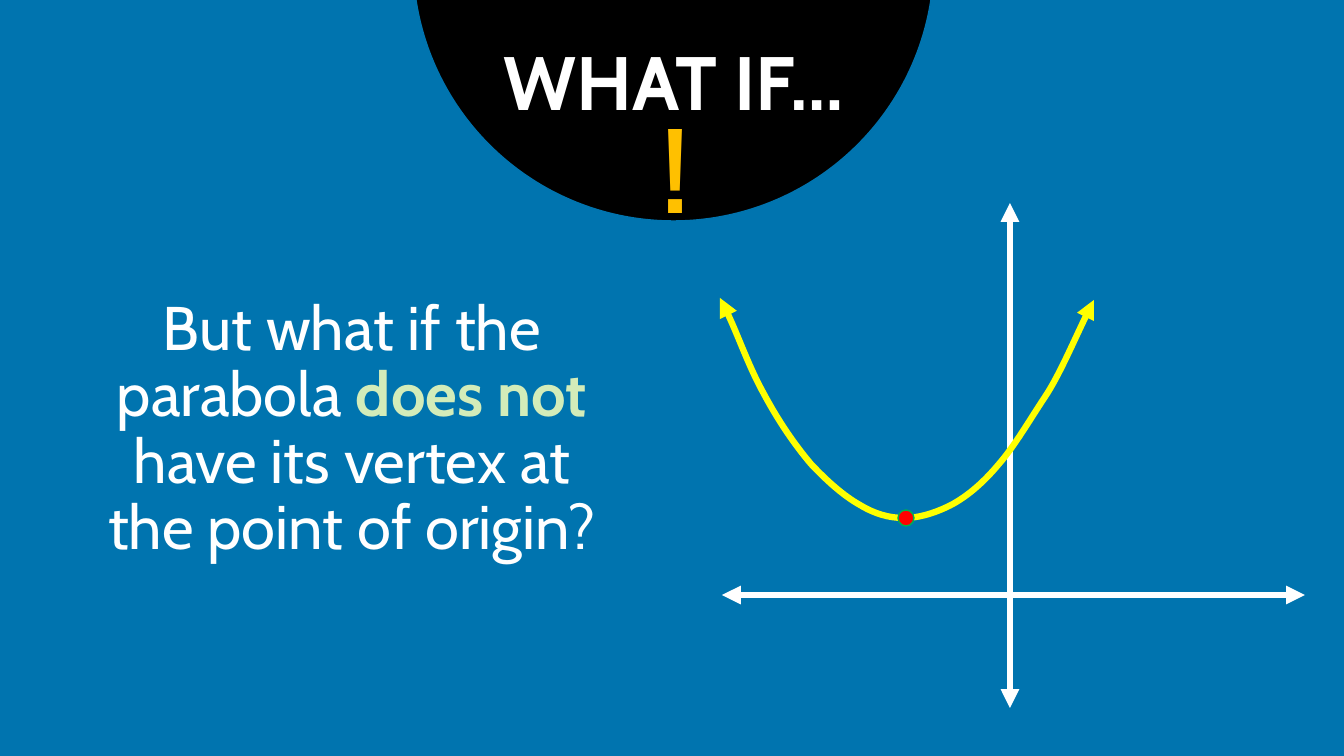
from lxml import etree
from pptx import Presentation
from pptx import util as u
from pptx.dml.color import RGBColor
from pptx.enum import shapes, text
from pptx.oxml import ns

SCALE = 914400 / 100.8
FONT = "Cabin"
BLUE, BLACK, WHITE = "0074AF", "000000", "FFFFFF"
MINT, GOLD, YELLOW = "D3ECB9", "FFC000", "FFFF00"
RED, GREEN = "FF0000", "00B050"
PARABOLA = [
    (720, 298),
    (735, 326), (749, 367), (764, 394),
    (779, 422), (795, 445), (811, 464),
    (828, 482), (844, 496), (860, 505),
    (875, 514), (889, 518), (904, 518),
    (919, 518), (936, 513), (953, 504),
    (969, 495), (984, 482), (999, 464),
    (1014, 447), (1031, 418), (1045, 397),
    (1059, 376), (1080, 327), (1094, 300),
]


def px(n):
    """Turn pixels into EMU."""
    return u.Emu(round(n * SCALE))


def rgb(value):
    """Turn a hex string into a colour."""
    return RGBColor.from_string(value)


def style_line(shape, color, width):
    """Set the colour and width of a line."""
    shape.line.color.rgb = rgb(color)
    shape.line.width = u.Pt(width)


def add_arrowheads(shape):
    """Put a triangle at both ends of a line."""
    ln = shape._element.spPr.find(ns.qn("a:ln"))
    for tag in ("a:headEnd", "a:tailEnd"):
        etree.SubElement(ln, ns.qn(tag), type="triangle")


def add_circle(s, x, y, size, fill, line):
    """Add a filled circle with a thin outline."""
    sp = s.shapes.add_shape(shapes.MSO_SHAPE.OVAL, px(x), px(y), px(size), px(size))
    sp.shadow.inherit = False
    sp.fill.solid()
    sp.fill.fore_color.rgb = rgb(fill)
    style_line(sp, line, 1)


def add_axis(s, x1, y1, x2, y2):
    """Add a white axis with two arrowheads."""
    axis = s.shapes.add_connector(
        shapes.MSO_CONNECTOR.STRAIGHT, px(x1), px(y1), px(x2), px(y2))
    style_line(axis, WHITE, 4.5)
    add_arrowheads(axis)
    etree.SubElement(axis._element.spPr, ns.qn("a:effectLst"))


def add_curve(s, points, color):
    """Add an open Bezier curve with two arrowheads."""
    builder = s.shapes.build_freeform(*points[0], scale=SCALE)
    builder.add_line_segments(points[1:], close=False)
    sp = builder.convert_to_shape()
    sp.shadow.inherit = False
    sp.fill.background()
    style_line(sp, color, 4.5)
    add_arrowheads(sp)
    segments = sp._element.findall(".//" + ns.qn("a:lnTo"))
    for i in range(0, len(segments), 3):
        bezier = etree.Element(ns.qn("a:cubicBezTo"))
        segments[i].addprevious(bezier)
        for segment in segments[i:i + 3]:
            bezier.append(segment[0])
            segment.getparent().remove(segment)


def fill_text(sp, runs, size, anchor=text.MSO_ANCHOR.TOP, wrap=True, margin=10):
    """Write one centred paragraph of (text, colour, bold) runs."""
    tf = sp.text_frame
    tf.word_wrap = wrap
    tf.auto_size = text.MSO_AUTO_SIZE.SHAPE_TO_FIT_TEXT
    tf.vertical_anchor = anchor
    tf.margin_left = tf.margin_right = px(margin)
    tf.margin_top = tf.margin_bottom = px(5)
    p = tf.paragraphs[0]
    p.alignment = text.PP_ALIGN.CENTER
    p.line_spacing = 0.9
    p.space_before = u.Pt(0)
    p.font.name = FONT
    p.font.size = u.Pt(size)
    for words, color, bold in runs:
        r = p.add_run()
        r.text = words
        r.font.color.rgb = rgb(color)
        r.font.bold = bold


def add_title(s, x, y, w, h, words):
    """Move the title placeholder to the front and fill it."""
    title = s.shapes.title
    title.left, title.top, title.width, title.height = map(px, (x, y, w, h))
    s.shapes._spTree.append(title._element)
    fill_text(title, [(words, WHITE, True)], 54)


def add_text(s, x, y, w, h, runs, size, **options):
    """Add a text box."""
    sp = s.shapes.add_textbox(px(x), px(y), px(w), px(h))
    fill_text(sp, runs, size, **options)


def main():
    """Build the slide."""
    prs = Presentation()
    prs.slide_width, prs.slide_height = px(1344), px(756)
    s = prs.slides.add_slide(prs.slide_layouts[5])
    s.background.fill.solid()
    s.background.fill.fore_color.rgb = rgb(BLUE)

    add_circle(s, 413, -300, 521, BLACK, BLUE)
    add_title(s, 432, 40, 483, 93, "WHAT IF…")
    question = [
        ("But what if the parabola ", WHITE, False),
        ("does not ", MINT, True),
        ("have its vertex at the point of origin?", WHITE, False),
    ]
    add_text(s, 44, 292, 616, 279, question, 44, margin=50)
    add_text(s, 632, 111, 88, 132, [("!", GOLD, True)], 80,
             anchor=text.MSO_ANCHOR.MIDDLE, wrap=False)

    add_axis(s, 722, 595, 1305, 595)
    add_axis(s, 1010, 203, 1010, 708)
    add_curve(s, PARABOLA, YELLOW)
    add_circle(s, 898, 510, 16, RED, GREEN)
    prs.save("out.pptx")


if __name__ == "__main__":
    main()
